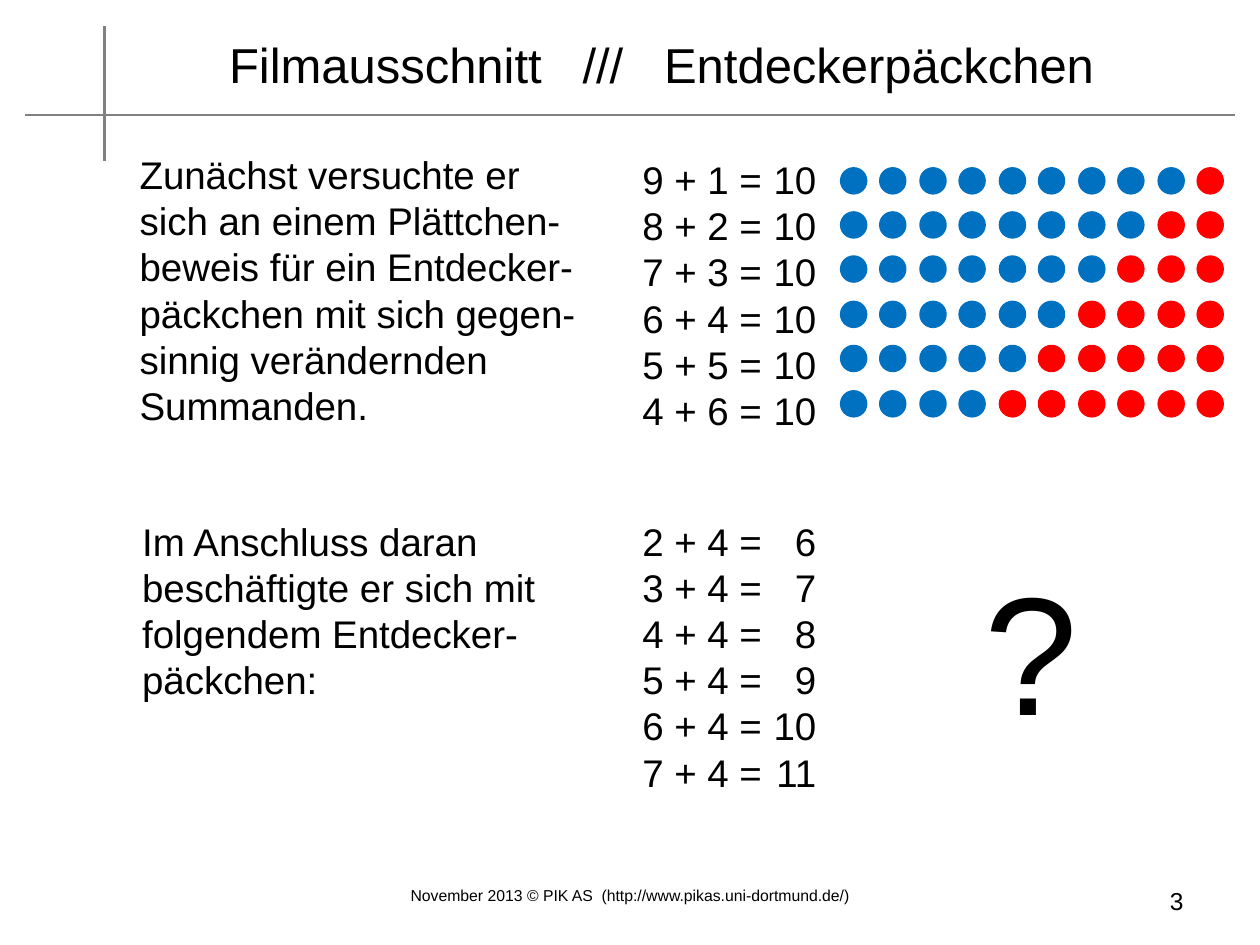
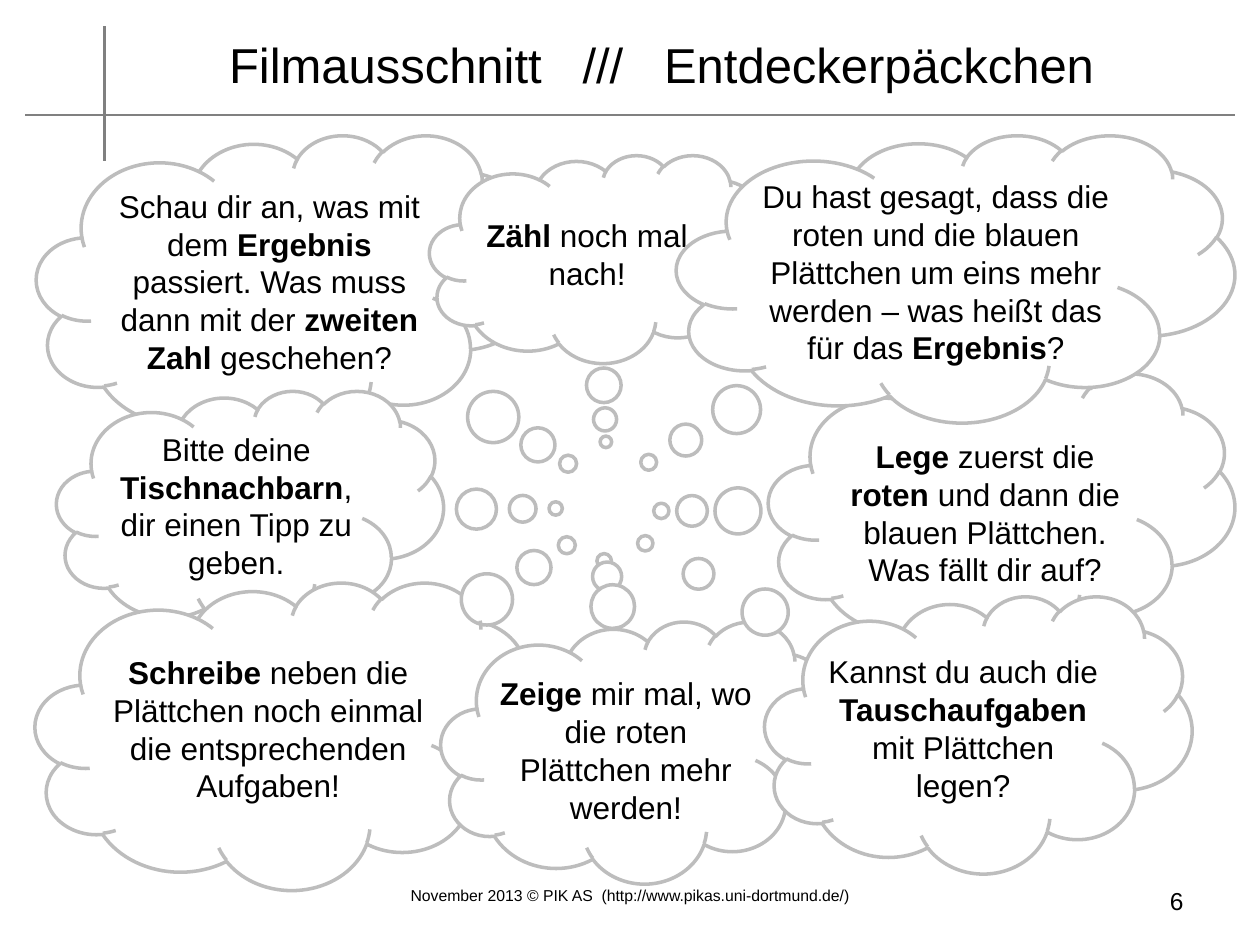
from lxml.etree import SubElement
from pptx import Presentation
from pptx.dml.color import RGBColor
from pptx.enum.shapes import MSO_CONNECTOR, MSO_SHAPE
from pptx.enum.text import MSO_ANCHOR, PP_ALIGN
from pptx.oxml.ns import qn
from pptx.util import Pt

PX = 9144
FONT = "Arial"
BLACK, WHITE, RULE, CLOUD = "000000", "FFFFFF", "808080", "BDBDBD"
BLUE, RED = "0070C0", "FF0000"
LEFT, CENTER, RIGHT = PP_ALIGN.LEFT, PP_ALIGN.CENTER, PP_ALIGN.RIGHT
TOP, MIDDLE, BOTTOM = MSO_ANCHOR.TOP, MSO_ANCHOR.MIDDLE, MSO_ANCHOR.BOTTOM

TITLE = ["Filmausschnitt", " ", "///", " ", "Entdeckerpäckchen"]
FOOTER = ["November 2013 © PIK AS", " ", "(http://www.pikas.uni-dortmund.de/)"]
PROOF = ("Zunächst versuchte er sich an einem Plättchen-beweis für ein "
         "Entdecker-päckchen mit sich gegen-sinnig verändernden Summanden.")
FOLLOW_UP = ("Im Anschluss daran beschäftigte er sich mit folgendem "
             "Entdecker-päckchen:")

HINTS = [
    ((29, 107, 398, 244), (0.56, 0.57), MIDDLE,
     "Schau dir an, was mit dem *Ergebnis* passiert. Was muss dann mit der "
     "*zweiten Zahl* geschehen?"),
    ((341, 123, 269, 165), (0.02, 0.88), MIDDLE, "*Zähl* noch mal nach!"),
    ((45, 310, 307, 191), (0.79, -0.01), MIDDLE,
     "Bitte deine *Tischnachbarn*, dir einen Tipp zu geben."),
    ((610, 296, 370, 219), (-0.73, 0), BOTTOM,
     "*Lege* zuerst die *roten* und dann die blauen Plättchen. "
     "Was fällt dir auf?"),
    ((28, 462, 398, 244), (0.56, -0.62), MIDDLE,
     "*Schreibe* neben die Plättchen noch einmal die entsprechenden Aufgaben!"),
    ((537, 107, 443, 228), (-0.55, 0.64), MIDDLE,
     "Du hast gesagt, dass die roten und die blauen Plättchen um eins mehr "
     "werden – was heißt das für das *Ergebnis*?"),
    ((350, 493, 316, 208), (-0.09, -0.73), BOTTOM,
     "*Zeige* mir mal, wo die roten Plättchen mehr werden!"),
    ((607, 473, 339, 220), (-0.78, -0.69), MIDDLE,
     "Kannst du auch die *Tauschaufgaben* mit Plättchen legen?"),
]


def color(value):
    """Return the colour for a hex string."""
    return RGBColor.from_string(value)


def scale(box):
    """Turn px lengths into EMU."""
    return [v * PX for v in box]


def style(p, size, align):
    """Set the font and alignment of a whole paragraph."""
    p.alignment = align
    p.font.name, p.font.size = FONT, Pt(size)
    p.font.color.rgb = color(BLACK)
    for r in p.runs:
        r.font.name, r.font.size = FONT, Pt(size)
        r.font.color.rgb = color(BLACK)


def add_runs(p, parts):
    """Add one run per part and return every second one."""
    for part in parts:
        p.add_run().text = part
    return p.runs[1::2]


def add_text(s, box, text, size, align=LEFT, anchor=TOP):
    """Add a wrapping text box and return its text frame."""
    tf = s.shapes.add_textbox(*scale(box)).text_frame
    tf.word_wrap, tf.vertical_anchor = True, anchor
    tf.text = text
    for p in tf.paragraphs:
        style(p, size, align)
    return tf


def add_spaced(s, box, parts, size, gap, anchor=TOP):
    """Add centred text whose spaces are widened by gap, in 1/100 pt."""
    p = add_text(s, box, "", size, CENTER, anchor).paragraphs[0]
    for r in add_runs(p, parts):
        r.font.size = Pt(size)
        r.font._element.set("spc", str(gap))
    style(p, size, CENTER)


def add_rule(s, *ends):
    """Draw a thin grey line."""
    line = s.shapes.add_connector(MSO_CONNECTOR.STRAIGHT, *scale(ends))
    line.line.color.rgb, line.line.width = color(RULE), Pt(1.25)
    SubElement(line._element.spPr, qn("a:effectLst"))


def paint(sp, fill, line):
    """Give a shape its fill and outline without shadow."""
    sp.shadow.inherit = False
    sp.fill.solid()
    sp.fill.fore_color.rgb = color(fill)
    sp.line.color.rgb, sp.line.width = color(line), Pt(2)


def add_slide(prs, number):
    """Add a slide with its crossed rules, title, number and footer."""
    s = prs.slides.add_slide(prs.slide_layouts[6])
    add_rule(s, 20, 91, 980, 91)
    add_rule(s, 83, 21, 83, 128)
    add_spaced(s, (100, 17, 850, 67), TITLE, 28, 1557, MIDDLE)
    add_text(s, (720, 698, 229, 52), str(number), 14, RIGHT)
    add_spaced(s, (256, 698, 488, 52), FOOTER, 9, 250)
    return s


def add_sums(s, box, pairs):
    """List sums with their results aligned on the right."""
    lines = [f"{a} + {b} =\t{a + b}" for a, b in pairs]
    tf = add_text(s, box, "\n".join(lines), 22)
    for p in tf.paragraphs:
        tabs = SubElement(p._p.get_or_add_pPr(), qn("a:tabLst"))
        SubElement(tabs, qn("a:tab"), pos=str(138 * PX), algn="r")
        p._p.pPr.insert(0, tabs)


def add_counters(s, left, top, pairs):
    """Show each sum as a row of blue and red counters."""
    group = s.shapes.add_group_shape()
    for row, (blue, red) in enumerate(pairs):
        for col in range(blue + red):
            box = left + col * 63 // 2, top + row * 177 // 5, 19, 19
            dot = group.shapes.add_shape(MSO_SHAPE.FLOWCHART_CONNECTOR, *scale(box))
            fill = BLUE if col < blue else RED
            paint(dot, fill, fill)


def add_hint(s, box, tail, anchor, text):
    """Add a thought cloud; starred words are bold."""
    sp = s.shapes.add_shape(MSO_SHAPE.CLOUD_CALLOUT, *scale(box))
    sp.adjustments[0], sp.adjustments[1] = tail
    paint(sp, WHITE, CLOUD)
    tf = sp.text_frame
    tf.word_wrap, tf.vertical_anchor = True, anchor
    tf.margin_left = tf.margin_right = 0
    p = tf.paragraphs[0]
    for r in add_runs(p, text.split("*")):
        r.font.bold = True
    style(p, 18, CENTER)


def build_sums_slide(prs):
    """Build the slide with the two series of sums."""
    s = add_slide(prs, 3)
    opposite = [(a, 10 - a) for a in range(9, 3, -1)]
    rising = [(a, 4) for a in range(2, 8)]
    add_text(s, (101, 115, 384, 230), PROOF, 22)
    add_text(s, (103, 406, 365, 156), FOLLOW_UP, 22)
    add_sums(s, (500, 119, 165, 230), opposite)
    add_sums(s, (500, 406, 165, 230), rising)
    add_counters(s, 668, 134, opposite)
    add_text(s, (762, 430, 113, 170), "?", 96, CENTER)


def build_hints_slide(prs):
    """Build the slide with the thought clouds."""
    s = add_slide(prs, 6)
    for hint in HINTS:
        add_hint(s, *hint)


def main():
    """Build and save the presentation."""
    prs = Presentation()
    prs.slide_width, prs.slide_height = scale((1000, 750))
    build_sums_slide(prs)
    build_hints_slide(prs)
    prs.save("out.pptx")


if __name__ == "__main__":
    main()
